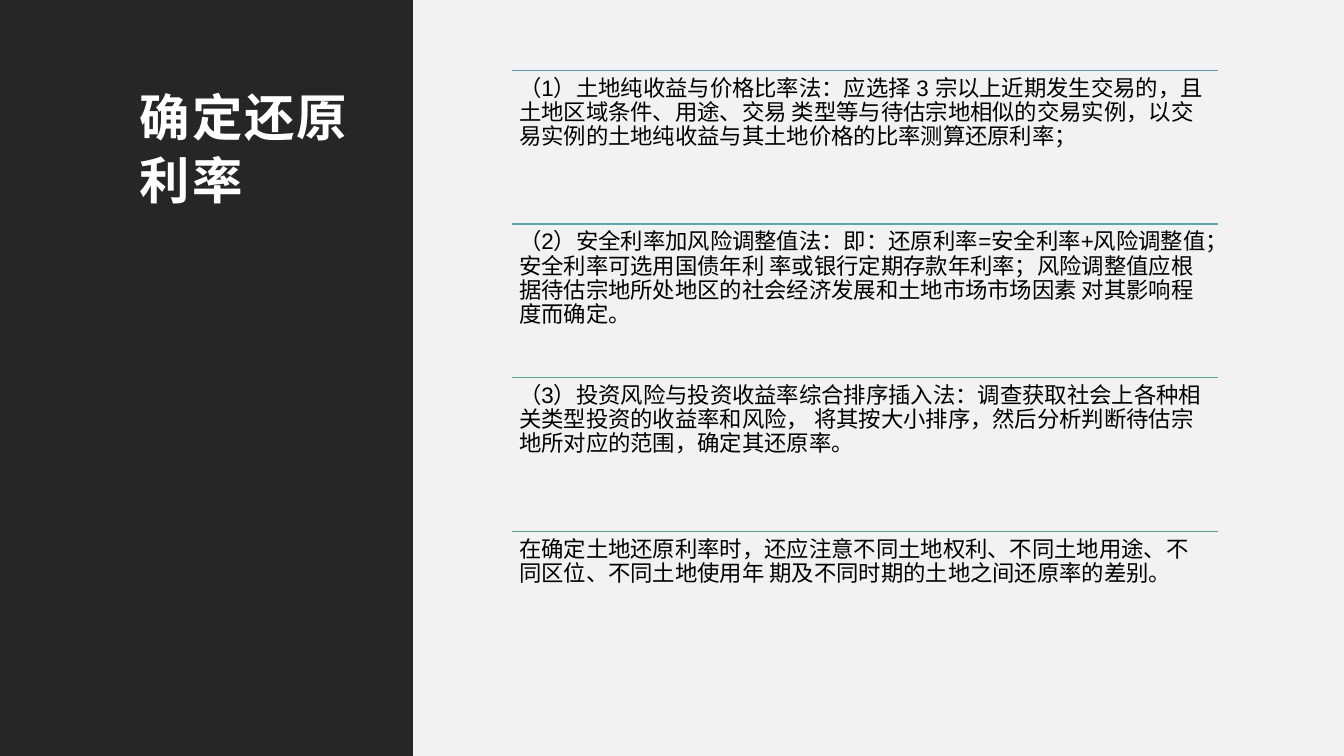
from lxml import etree
from pptx import Presentation
from pptx.dml.color import RGBColor
from pptx.enum.shapes import MSO_CONNECTOR, MSO_SHAPE
from pptx.enum.text import MSO_ANCHOR, MSO_AUTO_SIZE, PP_ALIGN
from pptx.oxml.ns import qn
from pptx.util import Pt

RECT = MSO_SHAPE.RECTANGLE
LINE = MSO_CONNECTOR.STRAIGHT
TOP = MSO_ANCHOR.TOP
FIXED = MSO_AUTO_SIZE.NONE
LEFT = PP_ALIGN.LEFT

WHITE = RGBColor(0xFF, 0xFF, 0xFF)
BLACK = RGBColor(0, 0, 0)
DARK = RGBColor(0x26, 0x26, 0x26)
PALE = RGBColor(0xF2, 0xF2, 0xF2)
BLUE = RGBColor(0x59, 0x99, 0xAF)
TEAL = RGBColor(0x59, 0xA9, 0xAA)
MINT = RGBColor(0x59, 0xA6, 0x95)
GREEN = RGBColor(0x5B, 0xA0, 0x80)
HAN = "Noto Sans CJK SC"


def write(box, text, size, color, font, inset, spacing, after=0, bold=False, track=0):
    frame = box.text_frame
    frame.word_wrap = True
    frame.auto_size = FIXED
    frame.vertical_anchor = TOP
    frame.margin_left = frame.margin_right = Pt(inset)
    frame.margin_top = frame.margin_bottom = Pt(inset)
    para = frame.paragraphs[0]
    para.alignment = LEFT
    para.line_spacing = spacing
    para.space_before = Pt(0)
    para.space_after = Pt(after)
    run = para.add_run()
    run.text = text
    run.font.size = Pt(size)
    run.font.bold = bold
    run.font.color.rgb = color
    run.font.name = font
    props = run.font._element
    etree.SubElement(props, qn("a:ea")).set("typeface", HAN)
    if track:
        props.set("spc", str(round(track * 100)))


deck = Presentation()
deck.slide_width, deck.slide_height = Pt(960), Pt(540)
slide = deck.slides.add_slide(deck.slide_layouts[5])
shapes = slide.shapes

# Light and dark panels
for left, width, color in [(294.5, 665.5, PALE), (0, 295, DARK)]:
    panel = shapes.add_shape(RECT, Pt(left), Pt(0), Pt(width), Pt(540))
    panel.shadow.inherit = False
    panel.fill.solid()
    panel.fill.fore_color.rgb = color
    panel.line.fill.background()

# Title, brought in front of the panels
title = shapes.title
shapes.element.append(title.element)
title.left, title.top, title.width, title.height = Pt(91.4), Pt(50.4), Pt(172.8), Pt(439)
write(title, "确定还原利率", size=36, color=WHITE, font=HAN, inset=8.6,
      spacing=1.05, bold=True, track=1.3)

# Four notes, each under a rule
notes = [
    (BLUE, "（1）土地纯收益与价格比率法：应选择 3 宗以上近期发生交易的，且土地区域条件、用途、"
           "交易 类型等与待估宗地相似的交易实例，以交易实例的土地纯收益与其土地价格的比率测算还原利率；"),
    (TEAL, "（2）安全利率加风险调整值法：即：还原利率=安全利率+风险调整值；安全利率可选用国债年利 "
           "率或银行定期存款年利率；风险调整值应根据待估宗地所处地区的社会经济发展和土地市场市场因素 "
           "对其影响程度而确定。"),
    (MINT, "（3）投资风险与投资收益率综合排序插入法：调查获取社会上各种相关类型投资的收益率和风险， "
           "将其按大小排序，然后分析判断待估宗地所对应的范围，确定其还原率。"),
    (GREEN, "在确定土地还原利率时，还应注意不同土地权利、不同土地用途、不同区位、不同土地使用年 "
            "期及不同时期的土地之间还原率的差别。"),
]
x, wide, step = 366, 504, 109.75
for i, (color, text) in enumerate(notes):
    y = 50.2 + i * step
    rule = shapes.add_connector(LINE, Pt(x), Pt(y), Pt(x + wide), Pt(y))
    rule.line.color.rgb = color
    rule.line.width = Pt(1)
    etree.SubElement(rule.element.spPr, qn("a:effectLst"))
    box = shapes.add_textbox(Pt(x), Pt(y), Pt(wide), Pt(step))
    write(box, text, size=16, color=BLACK, font="Arial", inset=4.8,
          spacing=0.9, after=5.6)

deck.save("out.pptx")
